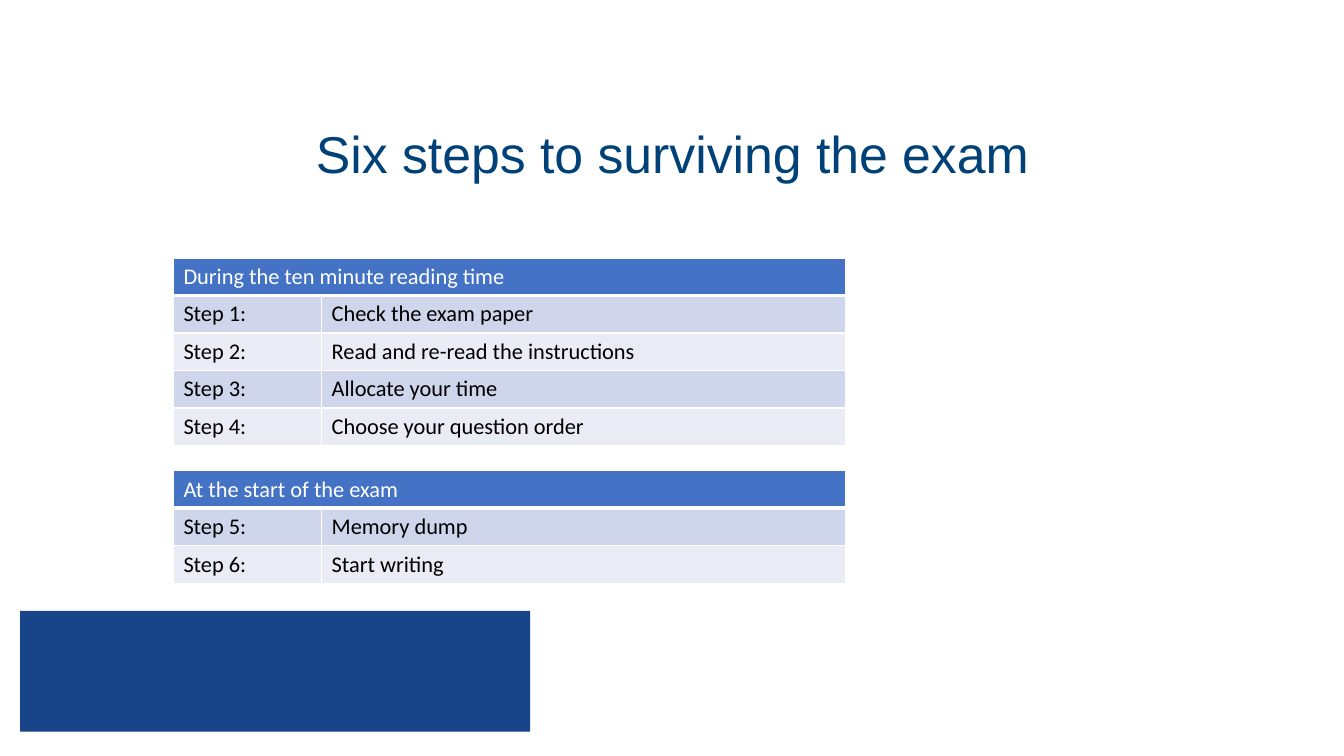
import pptx
import pptx.util
import pptx.dml.color
import pptx.enum.shapes
import pptx.enum.text
import pptx.oxml.ns
import lxml.etree

Inches = pptx.util.Inches
Pt = pptx.util.Pt
RGBColor = pptx.dml.color.RGBColor

NAVY = RGBColor(0x18, 0x45, 0x89)
TITLE_BLUE = RGBColor(0x00, 0x42, 0x77)
HEADER_BLUE = RGBColor(0x44, 0x72, 0xC4)
BANDS = (RGBColor(0xCF, 0xD5, 0xEA), RGBColor(0xE9, 0xEB, 0xF5))
WHITE = RGBColor(0xFF, 0xFF, 0xFF)
BLACK = RGBColor(0x00, 0x00, 0x00)

TITLE = "Six steps to surviving the exam"
PHASES = [
    {
        "heading": "During the ten minute reading time",
        "top": 2.56,
        "heading_height": 0.29,
        "steps": [
            "Check the exam paper",
            "Read and re-read the instructions",
            "Allocate your time",
            "Choose your question order",
        ],
    },
    {
        "heading": "At the start of the exam",
        "top": 4.67,
        "heading_height": 0.37,
        "steps": ["Memory dump", "Start writing"],
    },
]
TABLE_LEFT = 1.72
COLUMN_WIDTHS = (1.47, 5.2)
STEP_HEIGHT = 0.37


def write(frame, text, size=16, font="Calibri", color=BLACK, align=None, spacing=None):
    paragraph = frame.paragraphs[0]
    paragraph.alignment = align
    paragraph.line_spacing = spacing
    run = paragraph.add_run()
    run.text = text
    run.font.size = Pt(size)
    run.font.name = font
    run.font.bold = False
    run.font.color.rgb = color


def paint_cell(cell, fill, bottom=1):
    cell.fill.solid()
    cell.fill.fore_color.rgb = fill
    properties = cell.fill._xPr
    qn = pptx.oxml.ns.qn
    widths = {"a:lnL": 1, "a:lnR": 1, "a:lnT": 1, "a:lnB": bottom}
    for position, (side, width) in enumerate(widths.items()):
        border = lxml.etree.Element(qn(side), w=str(Pt(width)))
        solid = lxml.etree.SubElement(border, qn("a:solidFill"))
        lxml.etree.SubElement(solid, qn("a:srgbClr"), val=str(WHITE))
        properties.insert(position, border)


def add_phase(slide, phase, first_step):
    steps = phase["steps"]
    height = phase["heading_height"] + STEP_HEIGHT * len(steps)
    table = slide.shapes.add_table(
        len(steps) + 1, len(COLUMN_WIDTHS), Inches(TABLE_LEFT), Inches(phase["top"]),
        Inches(sum(COLUMN_WIDTHS)), Inches(height)).table
    for column, width in zip(table.columns, COLUMN_WIDTHS):
        column.width = Inches(width)
    for row in table.rows:
        row.height = Inches(STEP_HEIGHT)
    table.rows[0].height = Inches(phase["heading_height"])

    heading = table.cell(0, 0)
    heading.merge(table.cell(0, 1))
    for column in range(len(COLUMN_WIDTHS)):
        paint_cell(table.cell(0, column), HEADER_BLUE, bottom=3)
    write(heading.text_frame, phase["heading"], color=WHITE)

    for index, step in enumerate(steps):
        for column, text in enumerate((f"Step {first_step + index}:", step)):
            cell = table.cell(index + 1, column)
            paint_cell(cell, BANDS[index % 2])
            write(cell.text_frame, text)


def main():
    deck = pptx.Presentation()
    deck.slide_width = Inches(13.33)
    deck.slide_height = Inches(7.5)
    slide = deck.slides.add_slide(deck.slide_layouts[5])

    title = slide.shapes.title
    title.left, title.top = Inches(1.67), Inches(1.23)
    title.width, title.height = Inches(10), Inches(0.65)
    title.fill.solid()
    title.fill.fore_color.rgb = WHITE
    title.text_frame.word_wrap = True
    title.text_frame.auto_size = pptx.enum.text.MSO_AUTO_SIZE.NONE
    title.text_frame.vertical_anchor = pptx.enum.text.MSO_ANCHOR.MIDDLE
    write(title.text_frame, TITLE, size=37, font="Arial", color=TITLE_BLUE,
          align=pptx.enum.text.PP_ALIGN.CENTER, spacing=0.9)

    footer_block = slide.shapes.add_shape(
        pptx.enum.shapes.MSO_SHAPE.RECTANGLE,
        Inches(0.2), Inches(6.06), Inches(5.06), Inches(1.2))
    footer_block.shadow.inherit = False
    footer_block.fill.solid()
    footer_block.fill.fore_color.rgb = NAVY
    footer_block.line.fill.background()

    first_step = 1
    for phase in PHASES:
        add_phase(slide, phase, first_step)
        first_step += len(phase["steps"])

    deck.save("out.pptx")


if __name__ == "__main__":
    main()
